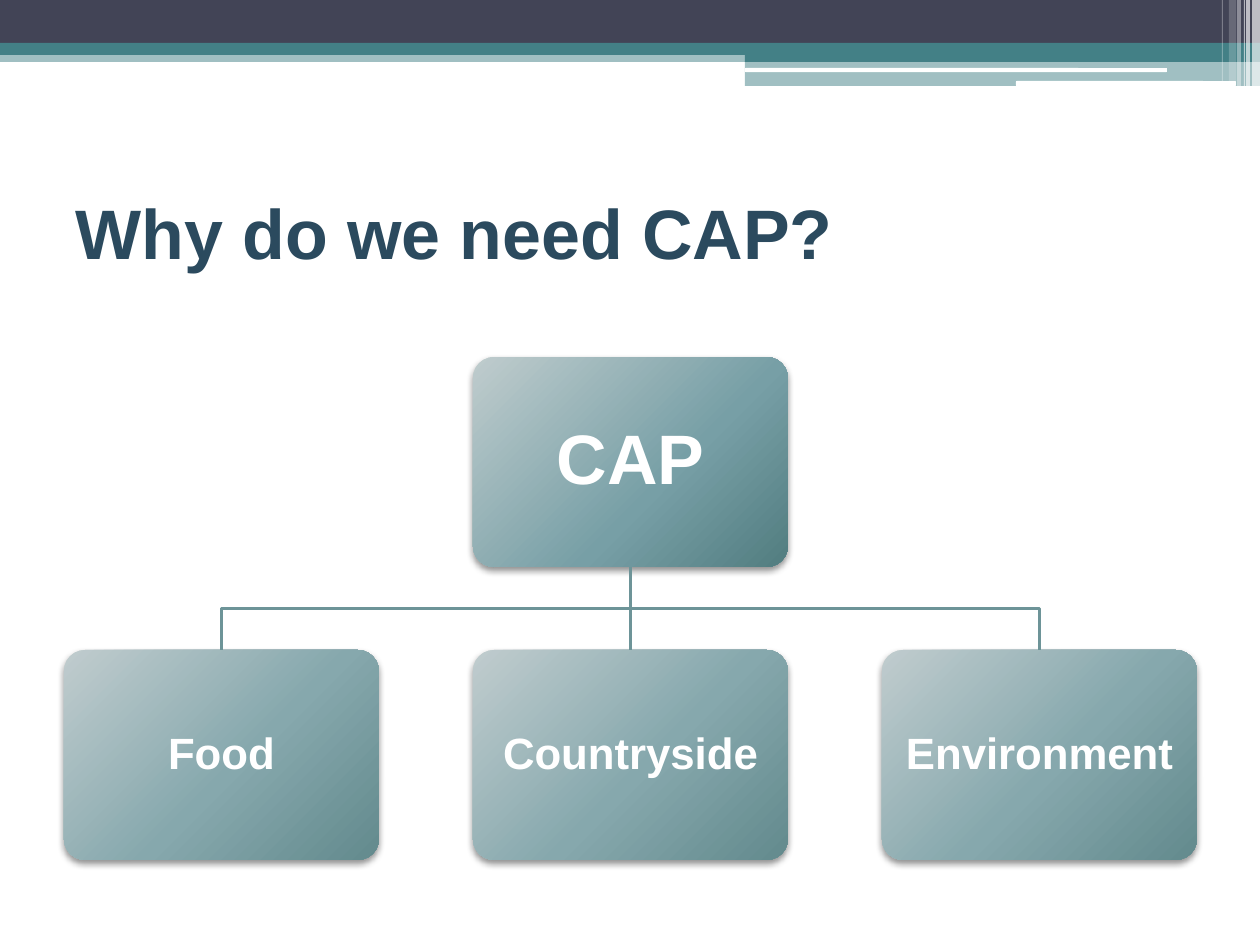
from copy import deepcopy

from pptx import Presentation
from pptx.dml.color import RGBColor
from pptx.enum.shapes import MSO_CONNECTOR as CONN, MSO_SHAPE as SHAPE
from pptx.enum.text import MSO_ANCHOR as ANCHOR, PP_ALIGN as ALIGN
from pptx.oxml import parse_xml
from pptx.oxml.ns import nsdecls
from pptx.util import Pt

PX = 914400 / 126
FONT = "Arial"
TEAL, DARK, WHITE, LINE = "438086", "424456", "FFFFFF", "6D9498"
ROOT_STOPS = [(0, "BFCCCD"), (0.6, "779FA6"), (1, "527D80")]
CHILD_STOPS = [(0, "C0CCCE"), (0.55, "86A8AD"), (1, "638A8D")]


def px(n):
    return round(n * PX)


def rgb(hex_color):
    return RGBColor.from_string(hex_color)


def add_bar(s, x, y, w, h, color, alpha=100, kind=SHAPE.RECTANGLE):
    """Add a plain filled bar; alpha is opacity in percent."""
    sp = s.shapes.add_shape(kind, px(x), px(y), px(w), px(h))
    sp.shadow.inherit = False
    sp.line.fill.background()
    sp.fill.solid()
    sp.fill.fore_color.rgb = rgb(color)
    if alpha < 100:
        clr = sp.fill._xPr.solidFill[0]
        clr.append(parse_xml(f'<a:alpha {nsdecls("a")} val="{alpha * 1000}"/>'))
    return sp


def write(tf, text, size, color, align=ALIGN.LEFT):
    tf.word_wrap = True
    tf.vertical_anchor = ANCHOR.MIDDLE
    p = tf.paragraphs[0]
    p.text = text
    p.alignment = align
    p.font.name, p.font.size, p.font.bold = FONT, Pt(size), True
    p.font.color.rgb = rgb(color)
    return p


def add_header(s, x, y, w):
    add_bar(s, x, y + 50, w, 12, TEAL, 50)
    add_bar(s, x, y, w, 43, DARK)
    add_bar(s, x, y + 43, w, 12, TEAL)
    right = x + w
    add_bar(s, right - 515, y + 49, 515, 13, TEAL)
    add_bar(s, right - 515, y + 61, 515, 25, TEAL, 50)
    for back, top, width, height in [(515, 68, 422, 4), (244, 81, 220, 5)]:
        add_bar(s, right - back, y + top, width, height, WHITE,
                kind=SHAPE.ROUNDED_RECTANGLE)
    for back, width, height, alpha in [(8, 8, 86, 65), (14, 4, 86, 65), (16, 1, 86, 60),
                                       (23, 4, 86, 40), (31, 7, 81, 20), (38, 1, 81, 30)]:
        add_bar(s, right - back, y, width, height, WHITE, alpha)


def add_title(s, x, y, w, h, text):
    tf = s.shapes.add_textbox(px(x), px(y), px(w), px(h)).text_frame
    write(tf, text, 40, "2B4A5E")


def add_node(s, x, y, w, h, text, size, inset, stops):
    """Add a rounded box with a diagonal gradient and a soft shadow."""
    sp = s.shapes.add_shape(SHAPE.ROUNDED_RECTANGLE, px(x), px(y), px(w), px(h))
    sp.adjustments[0] = 0.1
    sp.line.fill.background()
    sp.fill.gradient()
    sp.fill.gradient_angle = 315
    gs_list = sp.fill._xPr.gradFill.gsLst
    gs_list.append(deepcopy(gs_list[0]))
    for stop, (position, color) in zip(sp.fill.gradient_stops, stops):
        stop.position = position
        stop.color.rgb = rgb(color)
    sp._element.spPr.append(parse_xml(
        f'<a:effectLst {nsdecls("a")}><a:outerShdw blurRad="{Pt(4)}" dist="{Pt(2)}" '
        'dir="5400000" rotWithShape="0"><a:srgbClr val="000000"><a:alpha val="42000"/>'
        '</a:srgbClr></a:outerShdw></a:effectLst>'))
    tf = sp.text_frame
    tf.margin_left = tf.margin_right = tf.margin_top = tf.margin_bottom = px(inset)
    write(tf, text, size, WHITE, ALIGN.CENTER).line_spacing = 0.9
    return sp


def style_line(shape):
    shape.line.color.rgb = rgb(LINE)
    shape.line.width = Pt(1.5)


def add_branch(s, parent, child):
    """Join the parent's bottom to the child's top, bending halfway down."""
    x1, y1 = parent.left + parent.width // 2, parent.top + parent.height
    x2, y2 = child.left + child.width // 2, child.top
    if x1 == x2:
        link = s.shapes.add_connector(CONN.STRAIGHT, x1, y1, x2, y2)
        link.begin_connect(parent, 2)
        link.end_connect(child, 0)
        link._element.spPr.append(parse_xml(f'<a:effectLst {nsdecls("a")}/>'))
    else:
        mid = (y1 + y2) // 2
        fb = s.shapes.build_freeform(x1, y1)
        fb.add_line_segments([(x1, mid), (x2, mid), (x2, y2)], close=False)
        link = fb.convert_to_shape()
        link.fill.background()
        link.shadow.inherit = False
    style_line(link)


def add_tree(s, x, y, w, root, leaves):
    node_w, node_h, drop = 315, 210, 293
    pitch = (w - node_w) / (len(leaves) - 1)
    parent = add_node(s, x + (w - node_w) / 2, y, node_w, node_h, root, 40, 21, ROOT_STOPS)
    for i, leaf in enumerate(leaves):
        child = add_node(s, x + i * pitch, y + drop, node_w, node_h, leaf, 25, 13, CHILD_STOPS)
        add_branch(s, parent, child)


def main():
    prs = Presentation()
    prs.slide_width, prs.slide_height = px(1260), px(945)
    s = prs.slides.add_slide(prs.slide_layouts[6])
    add_header(s, 0, 0, 1260)
    add_title(s, 63, 158, 1134, 147, "Why do we need CAP?")
    add_tree(s, 64, 357, 1133, "CAP", ["Food", "Countryside", "Environment"])
    prs.save("out.pptx")


if __name__ == "__main__":
    main()
